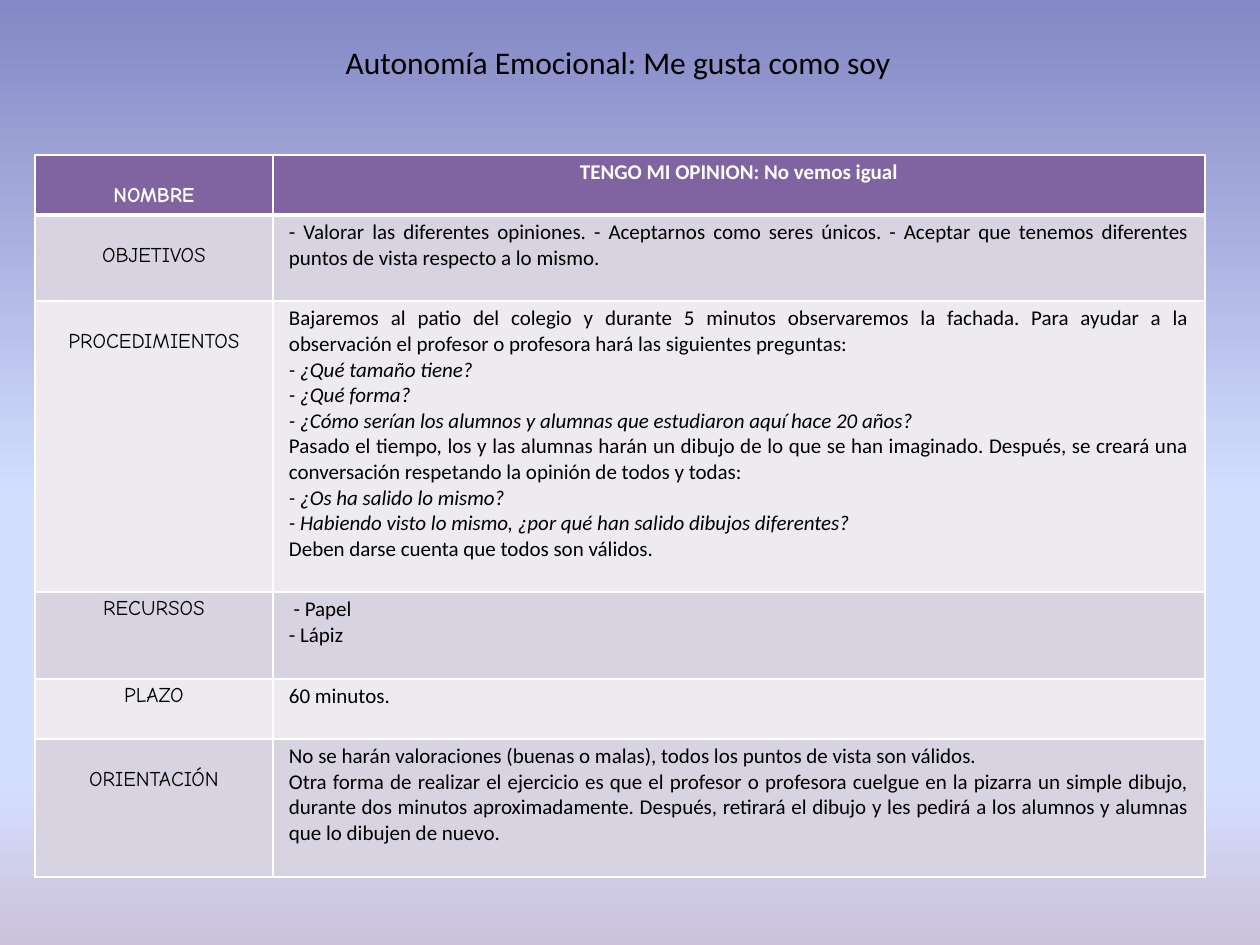
import pptx
import pptx.util
import pptx.dml.color
import pptx.enum.text
import pptx.oxml.ns
import lxml.etree
from dataclasses import dataclass

EMU_PER_PX = 914400 // 126
ALIGN = pptx.enum.text.PP_ALIGN
ANCHOR = pptx.enum.text.MSO_ANCHOR
qn = pptx.oxml.ns.qn


def px(length):
    return pptx.util.Emu(length * EMU_PER_PX)


def rgb(value):
    return pptx.dml.color.RGBColor.from_string(value)


@dataclass(frozen=True)
class Theme:
    ink: str = "000000"
    white: str = "FFFFFF"
    header: str = "8064A2"
    bands: tuple = ("D8D3E0", "EDEAF0")
    sky: tuple = ((0, "8488C4"), (53, "D4DEFF"), (83, "D4DEFF"), (100, "CCC1DA"))
    body_font: str = "Calibri"
    label_font: str = "Comic Neue"
    title_size: int = 18
    table_size: int = 12
    thin: int = 1
    thick: int = 3


@dataclass(frozen=True)
class Row:
    height: int
    label: str
    lines: tuple
    lowered: bool = True


class SlideBuilder:
    def __init__(self, deck, theme):
        self.theme = theme
        self.page = deck.slides.add_slide(deck.slide_layouts.get_by_name("Title Only"))

    def background(self):
        fill = self.page.background.fill
        fill.gradient()
        fill.gradient_angle = 270
        stops = self.page.element.find(".//" + qn("a:gsLst"))
        for stop in list(stops):
            stops.remove(stop)
        for percent, color in self.theme.sky:
            stop = lxml.etree.SubElement(stops, qn("a:gs"), pos=str(percent * 1000))
            lxml.etree.SubElement(stop, qn("a:srgbClr"), val=color)

    def title(self, text, left, top, width, height):
        box = self.page.shapes.title
        box.left, box.top, box.width, box.height = map(px, (left, top, width, height))
        frame = box.text_frame
        frame.text = text
        frame.vertical_anchor = ANCHOR.TOP
        para = frame.paragraphs[0]
        para.alignment = ALIGN.LEFT
        self.font(para, self.theme.body_font, self.theme.title_size, self.theme.ink)

    def font(self, para, name, size, color, bold=False, italic=False):
        font = para.font
        font.name, font.size = name, pptx.util.Pt(size)
        font.bold, font.italic = bold, italic
        font.color.rgb = rgb(color)

    def table(self, rows, left, top, widths):
        height = sum(row.height for row in rows)
        table = self.page.shapes.add_table(
            len(rows), len(widths), px(left), px(top), px(sum(widths)), px(height)
        ).table
        for column, width in zip(table.columns, widths):
            column.width = px(width)
        for index, row in enumerate(rows):
            table.rows[index].height = px(row.height)
            label, content = table.rows[index].cells
            self.cell(label, index, (row.label,), self.theme.label_font,
                      ALIGN.CENTER, 29 if row.lowered else 5)
            self.cell(content, index, row.lines, self.theme.body_font,
                      ALIGN.JUSTIFY if index else ALIGN.CENTER, 5)

    def cell(self, cell, index, lines, font_name, alignment, margin_top):
        theme = self.theme
        is_header = index == 0
        cell.fill.solid()
        cell.fill.fore_color.rgb = rgb(theme.header if is_header else theme.bands[(index - 1) % 2])
        cell.margin_left = cell.margin_right = px(16)
        cell.margin_top, cell.margin_bottom = px(margin_top), px(5)
        cell.vertical_anchor = ANCHOR.TOP
        frame = cell.text_frame
        frame.text = "\n".join(lines)
        for para in frame.paragraphs:
            para.alignment = alignment
            self.font(para, font_name, theme.table_size,
                      theme.white if is_header else theme.ink,
                      bold=is_header, italic="¿" in para.text)
        self.borders(cell,
                     top=theme.thick if index == 1 else theme.thin,
                     bottom=theme.thick if is_header else theme.thin)

    def borders(self, cell, top, bottom):
        properties = cell._tc.get_or_add_tcPr()
        sides = (("L", self.theme.thin), ("R", self.theme.thin), ("T", top), ("B", bottom))
        for position, (side, width) in enumerate(sides):
            line = lxml.etree.Element(qn("a:ln" + side), w=str(pptx.util.Pt(width)))
            fill = lxml.etree.SubElement(line, qn("a:solidFill"))
            lxml.etree.SubElement(fill, qn("a:srgbClr"), val=self.theme.white)
            properties.insert(position, line)


ACTIVITY = (
    Row(60, "NOMBRE", ("TENGO MI OPINION: No vemos igual",)),
    Row(86, "OBJETIVOS", (
        "- Valorar las diferentes opiniones. - Aceptarnos como seres únicos. "
        "- Aceptar que tenemos diferentes puntos de vista respecto a lo mismo.",
    )),
    Row(291, "PROCEDIMIENTOS", (
        "Bajaremos al patio del colegio y durante 5 minutos observaremos la fachada. "
        "Para ayudar a la observación el profesor o profesora hará las siguientes preguntas:",
        "- ¿Qué tamaño tiene?",
        "- ¿Qué forma?",
        "- ¿Cómo serían los alumnos y alumnas que estudiaron aquí hace 20 años?",
        "Pasado el tiempo, los y las alumnas harán un dibujo de lo que se han imaginado. "
        "Después, se creará una conversación respetando la opinión de todos y todas:",
        "- ¿Os ha salido lo mismo?",
        "- Habiendo visto lo mismo, ¿por qué han salido dibujos diferentes?",
        "Deben darse cuenta que todos son válidos.",
    )),
    Row(87, "RECURSOS", (" - Papel", "- Lápiz"), lowered=False),
    Row(60, "PLAZO", ("60 minutos.",), lowered=False),
    Row(138, "ORIENTACIÓN", (
        "No se harán valoraciones (buenas o malas), todos los puntos de vista son válidos.",
        "Otra forma de realizar el ejercicio es que el profesor o profesora cuelgue en la "
        "pizarra un simple dibujo, durante dos minutos aproximadamente. Después, retirará el "
        "dibujo y les pedirá a los alumnos y alumnas que lo dibujen de nuevo.",
    )),
)


def main():
    deck = pptx.Presentation()
    deck.slide_width, deck.slide_height = px(1260), px(945)
    builder = SlideBuilder(deck, Theme())
    builder.background()
    builder.title("Autonomía Emocional: Me gusta como soy", 333, 37, 615, 50)
    builder.table(ACTIVITY, 35, 155, (238, 932))
    deck.save("out.pptx")


if __name__ == "__main__":
    main()
